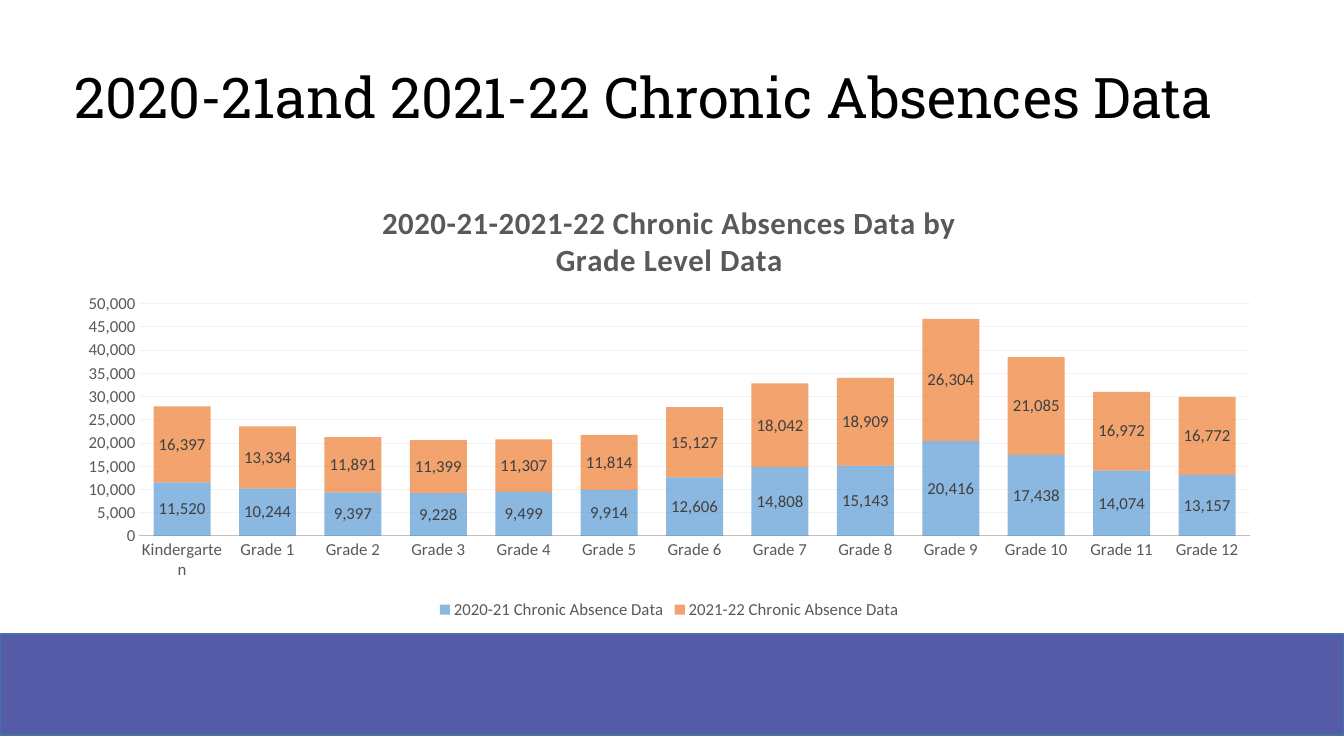
from lxml.etree import SubElement
from pptx import Presentation
from pptx.chart.data import CategoryChartData
from pptx.dml.color import RGBColor
from pptx.enum.chart import XL_CHART_TYPE, XL_LEGEND_POSITION, XL_TICK_MARK
from pptx.enum.shapes import MSO_SHAPE
from pptx.enum.text import MSO_ANCHOR, MSO_AUTO_SIZE, PP_ALIGN
from pptx.oxml import parse_xml
from pptx.oxml.ns import nsdecls, qn
from pptx.util import Pt

GRADES = ["Kindergarten"] + [f"Grade {number}" for number in range(1, 13)]
ABSENCES = [
    ("2020-21 Chronic Absence Data", "5B9BD5",
     [11520, 10244, 9397, 9228, 9499, 9914, 12606,
      14808, 15143, 20416, 17438, 14074, 13157]),
    ("2021-22 Chronic Absence Data", "ED7D31",
     [16397, 13334, 11891, 11399, 11307, 11814, 15127,
      18042, 18909, 26304, 21085, 16972, 16772]),
]
CHART_HEADING = ["2020-21-2021-22 Chronic Absences Data by", "Grade Level Data"]
NUMBER_FORMAT = "#,##0"
GREY = "595959"


def rgb(hex_color):
    return RGBColor.from_string(hex_color)


def style_font(font, size, color, name="Calibri", bold=False):
    font.size, font.name, font.bold = Pt(size), name, bold
    font.color.rgb = rgb(color)


def style_line(line, color, width):
    line.color.rgb = rgb(color)
    line.width = Pt(width)


def add_footer_band(slide):
    band = slide.shapes.add_shape(MSO_SHAPE.RECTANGLE, Pt(0), Pt(453), Pt(960), Pt(72))
    band.shadow.inherit = False
    band.fill.solid()
    band.fill.fore_color.rgb = rgb("565BA7")
    style_line(band.line, "43739E", 1)


def set_title(slide, text):
    title = slide.shapes.title
    title.left, title.top, title.width, title.height = Pt(46), Pt(29), Pt(864), Pt(86)
    frame = title.text_frame
    frame.auto_size = MSO_AUTO_SIZE.NONE
    frame.vertical_anchor = MSO_ANCHOR.MIDDLE
    paragraph = frame.paragraphs[0]
    paragraph.alignment = PP_ALIGN.LEFT
    paragraph.line_spacing = 0.9
    run = paragraph.add_run()
    run.text = text
    style_font(run.font, 40, "000000", "Roboto Slab")


def set_chart_heading(chart, lines):
    frame = chart.chart_title.text_frame
    chart.chart_title.include_in_layout = False
    for index, line in enumerate(lines):
        paragraph = frame.add_paragraph() if index else frame.paragraphs[0]
        run = paragraph.add_run()
        run.text = line
        style_font(run.font, 22, GREY, bold=True)
        run.font._element.set("spc", "50")


def place_plot(chart, **fractions):
    """Fix the inner plot area as fractions (x, y, w, h) of the chart."""
    plot_area = chart._chartSpace.chart.plotArea
    for old_layout in plot_area.findall(qn("c:layout")):
        plot_area.remove(old_layout)
    values = "".join(f'<c:{key} val="{value}"/>' for key, value in fractions.items())
    plot_area.insert(0, parse_xml(
        f'<c:layout {nsdecls("c")}><c:manualLayout><c:layoutTarget val="inner"/>'
        f'<c:xMode val="edge"/><c:yMode val="edge"/>{values}'
        "</c:manualLayout></c:layout>"))


def style_axes(chart):
    for axis in (chart.category_axis, chart.value_axis):
        axis.major_tick_mark = axis.minor_tick_mark = XL_TICK_MARK.NONE
        style_font(axis.tick_labels.font, 12, GREY)
    style_line(chart.category_axis.format.line, "BFBFBF", 0.75)
    values = chart.value_axis
    values.minimum_scale, values.maximum_scale, values.major_unit = 0, 50000, 5000
    values.tick_labels.number_format = NUMBER_FORMAT
    values.tick_labels.number_format_is_linked = False
    values.format.line.fill.background()
    style_line(values.major_gridlines.format.line, "F2F2F2", 0.75)


def style_series(series, color):
    fill = series.format.fill
    fill.solid()
    fill.fore_color.rgb = rgb(color)
    color_element = series._element.find(f".//{qn('a:srgbClr')}")
    SubElement(color_element, qn("a:alpha")).set("val", "70000")
    labels = series.data_labels
    labels.show_value = True
    labels.number_format = NUMBER_FORMAT
    labels.number_format_is_linked = False
    style_font(labels.font, 12, "404040")


def add_absence_chart(slide):
    data = CategoryChartData(number_format=NUMBER_FORMAT)
    data.categories = GRADES
    for name, _, counts in ABSENCES:
        data.add_series(name, counts)
    chart = slide.shapes.add_chart(
        XL_CHART_TYPE.COLUMN_STACKED, Pt(46), Pt(132.5), Pt(864), Pt(313), data).chart
    style_font(chart.font, 10, "000000")
    set_chart_heading(chart, CHART_HEADING)
    place_plot(chart, x=0.062, y=0.27, w=0.918, h=0.53)
    style_axes(chart)

    plot = chart.plots[0]
    plot.gap_width, plot.overlap = 50, 100
    plot.vary_by_categories = False
    for series, (_, color, _) in zip(plot.series, ABSENCES):
        style_series(series, color)

    chart.has_legend = True
    chart.legend.position = XL_LEGEND_POSITION.BOTTOM
    chart.legend.include_in_layout = False
    style_font(chart.legend.font, 12, GREY)


def main():
    deck = Presentation()
    deck.slide_width, deck.slide_height = Pt(960), Pt(540)
    slide = deck.slides.add_slide(deck.slide_layouts[5])
    add_footer_band(slide)
    set_title(slide, "2020-21and 2021-22 Chronic Absences Data")
    add_absence_chart(slide)
    deck.save("out.pptx")


if __name__ == "__main__":
    main()
